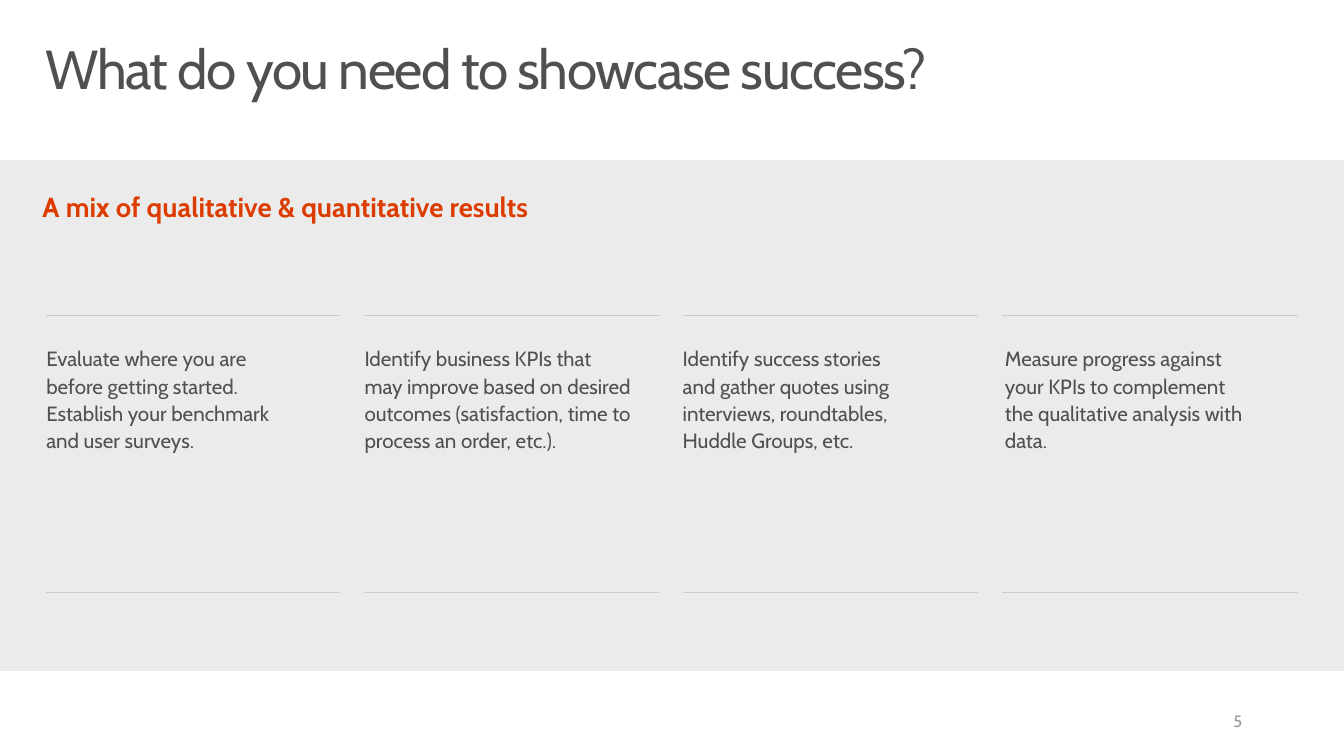
from dataclasses import dataclass

from lxml.etree import SubElement
from pptx import Presentation
from pptx.dml.color import RGBColor
from pptx.enum.shapes import MSO_CONNECTOR, MSO_SHAPE
from pptx.enum.text import MSO_ANCHOR, MSO_AUTO_SIZE, PP_ALIGN
from pptx.oxml.ns import qn
from pptx.util import Pt

TITLE = "What do you need to showcase success?"
SUBHEAD = "A mix of qualitative & quantitative results"
PAGE = "5"
# left, width, paragraphs
STEPS = [
    (37, 274, ["Evaluate where you are before getting started.",
               "Establish your benchmark and user surveys."]),
    (359, 308, ["Identify business KPIs that\vmay improve based on desired "
                "outcomes (satisfaction, time to process an order, etc.)."]),
    (681, 256, ["Identify success stories and gather quotes using "
                "interviews, roundtables, Huddle Groups, etc."]),
    (1007, 269, ["Measure progress against your KPIs to complement "
                 "the qualitative analysis with data."]),
]

PX = 9144  # 100 px to the inch
WIDE, HIGH = 1360, 765
PANEL_TOP, PANEL_END = 162, 679
RULE_LEFT, RULE_END = 47, 1314
RULE_TOPS = (319, 600)
GAP_FIRST, GAP_LAST, GAP_TOP, GAP_WIDE = 22, 1313, 241, 24
STEP_TOP, STEP_HIGH = 343, 121


@dataclass(frozen=True)
class Theme:
    font: str = "Cabin"
    ink: str = "505050"
    accent: str = "DC3C00"
    panel: str = "EBEBEB"
    rule: str = "CCCCCC"
    muted: str = "989898"
    title: int = 40
    subhead: int = 20
    body: int = 15
    page: int = 12


THEME = Theme()


def scale(*lengths):
    return [n * PX for n in lengths]


def write(frame, lines, size, color, spacing=1.0, align=PP_ALIGN.LEFT, bold=False):
    """Fill a text frame, one paragraph for each line."""
    frame.word_wrap = True
    for i, line in enumerate(lines):
        para = frame.paragraphs[0] if i == 0 else frame.add_paragraph()
        para.text = line
        para.alignment = align
        para.line_spacing = spacing
        font = para.font
        font.name, font.size, font.bold = THEME.font, Pt(size), bold
        font.color.rgb = RGBColor.from_string(color)


def inset(frame, side, end):
    frame.margin_left = frame.margin_right = side * PX
    frame.margin_top = frame.margin_bottom = end * PX


def add_title(slide):
    title = slide.shapes.title
    title.left, title.top, title.width, title.height = scale(30, 33, 1300, 100)
    frame = title.text_frame
    inset(frame, 16, 10)
    frame.auto_size = MSO_AUTO_SIZE.NONE
    frame.vertical_anchor = MSO_ANCHOR.TOP
    write(frame, [TITLE], THEME.title, THEME.ink, 0.9)
    for run in frame.paragraphs[0].runs:
        run.font._element.set("spc", "-104")


def add_block(slide, left, top, width):
    """Draw a panel-coloured block that reaches down to the panel's end."""
    block = slide.shapes.add_shape(
        MSO_SHAPE.RECTANGLE, *scale(left, top, width, PANEL_END - top))
    block.shadow.inherit = False
    block.fill.solid()
    block.fill.fore_color.rgb = RGBColor.from_string(THEME.panel)
    block.line.fill.background()


def add_rule(slide, top):
    rule = slide.shapes.add_connector(
        MSO_CONNECTOR.STRAIGHT, *scale(RULE_LEFT, top, RULE_END, top))
    rule.line.color.rgb = RGBColor.from_string(THEME.rule)
    rule.line.width = Pt(0.75)
    SubElement(rule._element.spPr, qn("a:effectLst"))


def main():
    deck = Presentation()
    deck.slide_width, deck.slide_height = scale(WIDE, HIGH)
    slide = deck.slides.add_slide(deck.slide_layouts[5])
    add_block(slide, 0, PANEL_TOP, WIDE)
    add_title(slide)

    # Gaps cut the two long rules into columns.
    for top in RULE_TOPS:
        add_rule(slide, top)
    pitch = (GAP_LAST - GAP_FIRST) / len(STEPS)
    for i in range(len(STEPS) + 1):
        add_block(slide, int(GAP_FIRST + i * pitch), GAP_TOP, GAP_WIDE)

    subhead = slide.shapes.add_textbox(*scale(43, 189, 634, 40)).text_frame
    inset(subhead, 0, 0)
    write(subhead, [SUBHEAD], THEME.subhead, THEME.accent, 1.1, bold=True)

    for left, width, lines in STEPS:
        step = slide.shapes.add_textbox(*scale(left, STEP_TOP, width, STEP_HIGH))
        write(step.text_frame, lines, THEME.body, THEME.ink, 1.1)

    page = slide.shapes.add_textbox(*scale(961, 709, 306, 41)).text_frame
    page.vertical_anchor = MSO_ANCHOR.MIDDLE
    write(page, [PAGE], THEME.page, THEME.muted, align=PP_ALIGN.RIGHT)

    deck.save("out.pptx")


if __name__ == "__main__":
    main()
